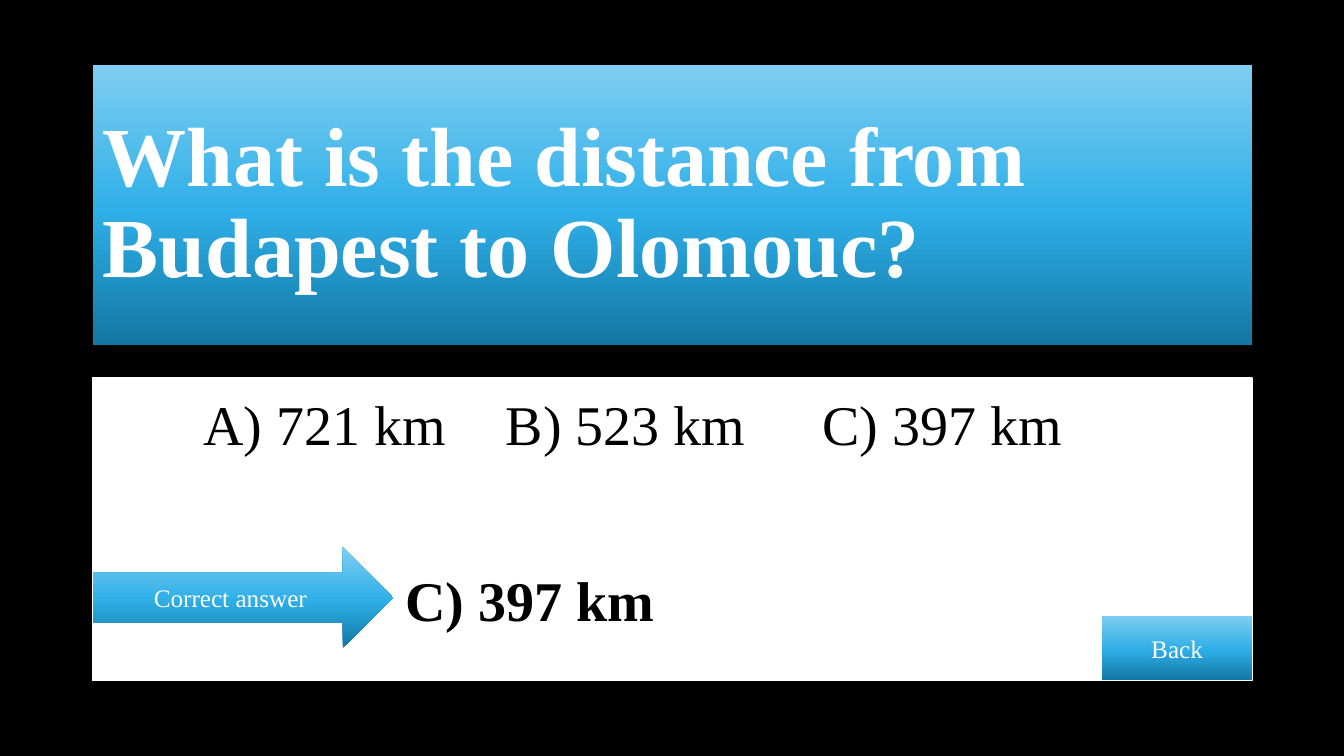
from dataclasses import dataclass
from pptx import Presentation
from pptx.dml.color import RGBColor
from pptx.enum.shapes import MSO_SHAPE as Shape
from pptx.enum.text import MSO_ANCHOR as Anchor, PP_ALIGN as Align
from pptx.oxml import parse_xml
from pptx.oxml.ns import nsdecls
from pptx.util import Inches, Pt


@dataclass(frozen=True)
class Theme:
    """Colours, font and type sizes of the quiz."""
    background: str = "000000"
    panel: str = "FFFFFF"
    light_text: str = "FFFFFF"
    dark_text: str = "000000"
    gradient: tuple = ((0, "1277A4"), (48, "2FAFE8"), (100, "7FCEF1"))
    font: str = "Times New Roman"
    question_size: int = 60
    answer_size: int = 40
    label_size: int = 18


THEME = Theme()
WIDTH, HEIGHT = 13.33, 7.5


def add_box(slide, box, kind=Shape.RECTANGLE, colour=None):
    """Add a borderless shape, filled plainly or with the theme gradient."""
    shape = slide.shapes.add_shape(kind, *(Inches(length) for length in box))
    shape.shadow.inherit = False
    shape.line.fill.background()
    if colour:
        shape.fill.solid()
        shape.fill.fore_color.rgb = RGBColor.from_string(colour)
        return shape
    stops = "".join(
        f'<a:gs pos="{share * 1000}"><a:srgbClr val="{stop}"/></a:gs>'
        for share, stop in THEME.gradient)
    properties = shape.fill._xPr
    properties.find("{*}prstGeom").addnext(parse_xml(
        f'<a:gradFill {nsdecls("a")} rotWithShape="1"><a:gsLst>{stops}</a:gsLst>'
        '<a:lin ang="16200000" scaled="0"/></a:gradFill>'))
    return shape


def write(paragraph, text, size, colour=THEME.light_text, bold=False,
          align=Align.LEFT, spacing=1.0, before=0, tabs=()):
    """Write one formatted run into a paragraph, with tab stops in inches."""
    paragraph.alignment = align
    paragraph.line_spacing = spacing
    paragraph.space_before = Pt(before)
    if tabs:
        stops = "".join(f'<a:tab pos="{Inches(tab)}" algn="l"/>' for tab in tabs)
        paragraph._p.get_or_add_pPr().append(
            parse_xml(f'<a:tabLst {nsdecls("a")}>{stops}</a:tabLst>'))
    run = paragraph.add_run()
    run.text = text
    run.font.name = THEME.font
    run.font.size = Pt(size)
    run.font.bold = bold
    run.font.color.rgb = RGBColor.from_string(colour)


def add_question(slide, box, text):
    """Place the question banner."""
    frame = add_box(slide, box).text_frame
    frame.word_wrap = True
    frame.vertical_anchor = Anchor.MIDDLE
    write(frame.paragraphs[0], text, THEME.question_size, bold=True, spacing=0.9)


def add_label(slide, box, text, kind=Shape.RECTANGLE):
    """Place a gradient shape with a small centred label."""
    frame = add_box(slide, box, kind).text_frame
    frame.word_wrap = True
    frame.vertical_anchor = Anchor.MIDDLE
    write(frame.paragraphs[0], text, THEME.label_size, align=Align.CENTER)


def add_answers(slide, box, choices, answer):
    """Place the answer panel with its arrow and back button."""
    left, top, width, height = box
    panel = add_box(slide, box, colour=THEME.panel)
    panel.line.color.rgb = RGBColor.from_string(THEME.panel)
    panel.line.width = Pt(1)
    frame = panel.text_frame
    frame.word_wrap = True
    frame.vertical_anchor = Anchor.TOP
    style = {"size": THEME.answer_size, "colour": THEME.dark_text,
             "spacing": 1.1, "tabs": range(1, 8)}
    write(frame.paragraphs[0], choices, before=10, **style)
    write(frame.add_paragraph(), answer, before=73, bold=True, **style)

    button_width, button_height = 1.49, 0.64
    add_label(slide, (left + width - button_width, top + height - button_height,
                      button_width, button_height), "Back")
    add_label(slide, (left, top + 0.56 * height, 2.98, height / 3),
              "Correct answer", Shape.RIGHT_ARROW)


def main():
    """Build and save the quiz slide."""
    presentation = Presentation()
    presentation.slide_width = Inches(WIDTH)
    presentation.slide_height = Inches(HEIGHT)
    slide = presentation.slides.add_slide(presentation.slide_layouts[6])
    slide.background.fill.solid()
    slide.background.fill.fore_color.rgb = RGBColor.from_string(THEME.background)

    margin, content_width = 0.92, 11.5
    add_question(slide, (margin, 0.64, content_width, 2.78),
                 "What is the distance from Budapest to Olomouc?")
    add_answers(slide, (margin, HEIGHT / 2, content_width, 3),
                "\tA) 721 km\tB) 523 km\t C) 397 km", "\t\t\tC) 397 km")
    presentation.save("out.pptx")


if __name__ == "__main__":
    main()
